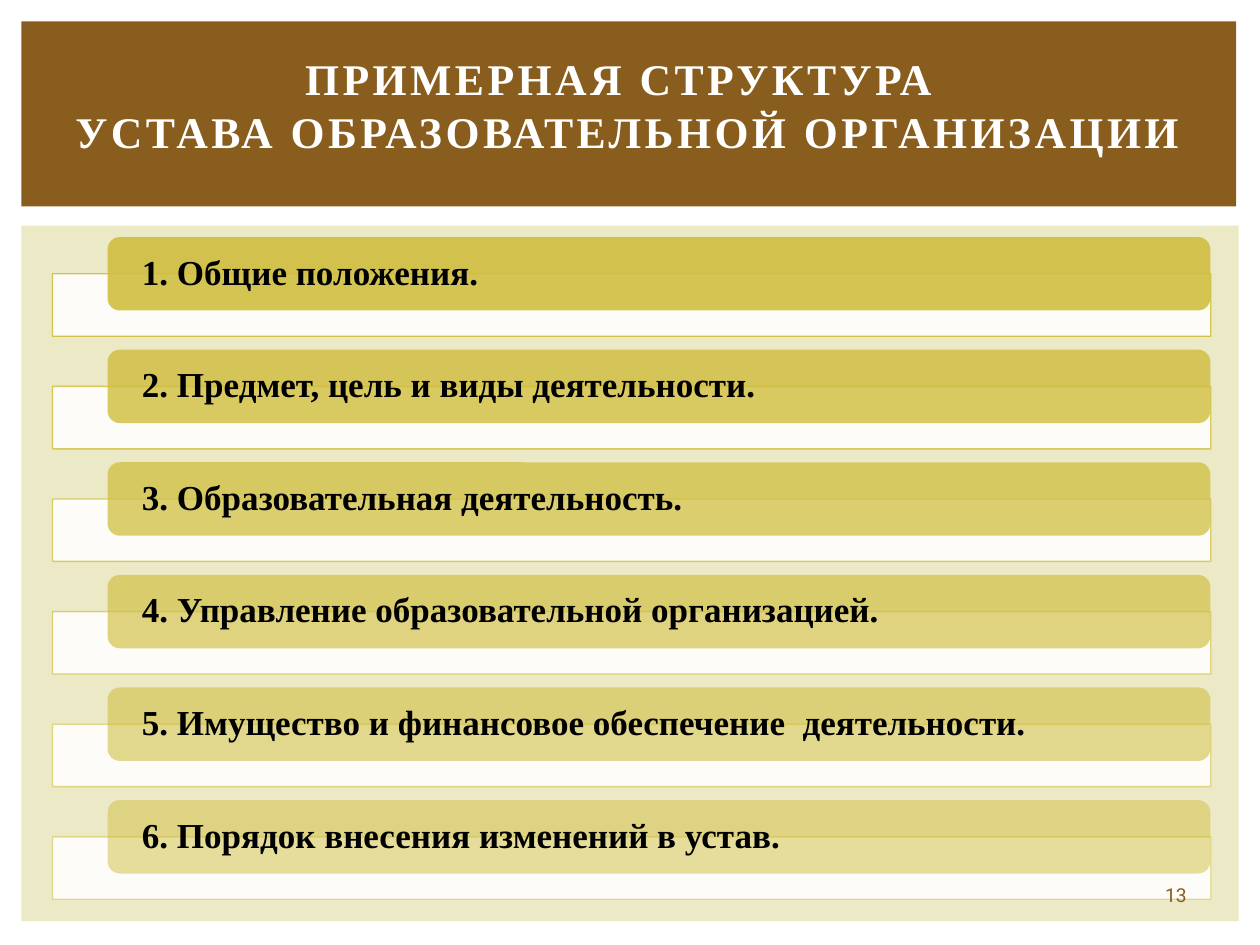
from dataclasses import dataclass

from lxml.etree import SubElement
from pptx import Presentation
from pptx.dml.color import RGBColor
from pptx.enum.shapes import MSO_SHAPE as Shape
from pptx.enum.text import MSO_ANCHOR as Anchor, MSO_AUTO_SIZE as AutoSize, PP_ALIGN as Align
from pptx.oxml.ns import qn
from pptx.util import Cm, Pt


@dataclass(frozen=True)
class Theme:
    brown: str = "895D1D"
    sand: str = "ECE9C6"
    gold: str = "D0BE40"
    white: str = "FFFFFF"
    black: str = "000000"
    serif: str = "Times New Roman"
    sans: str = "Roboto"
    title_size: int = 25
    item_size: int = 20
    number_size: int = 11


theme = Theme()
ITEMS = [
    "1. Общие положения.",
    "2. Предмет, цель и виды деятельности.",
    "3. Образовательная деятельность.",
    "4. Управление образовательной организацией.",
    "5. Имущество и финансовое обеспечение  деятельности.",
    "6. Порядок внесения изменений в устав.",
]
ROW_PITCH = 2.27

deck = Presentation()
deck.slide_width, deck.slide_height = Cm(25.4), Cm(19.05)
page = deck.slides.add_slide(deck.slide_layouts[5])


def add_block(kind, left, top, width, height, fill, opacity=100, line_opacity=None):
    """Add a filled shape; opacities are percentages, no line_opacity means no line."""
    block = page.shapes.add_shape(kind, Cm(left), Cm(top), Cm(width), Cm(height))
    block.shadow.inherit = False
    paints = [(block.fill, fill, opacity)]
    if line_opacity is None:
        block.line.fill.background()
    else:
        block.line.width = Pt(0.79)
        paints.append((block.line.fill, theme.gold, line_opacity))
    for paint, color, percent in paints:
        paint.solid()
        paint.fore_color.rgb = RGBColor.from_string(color)
    for color, (_, _, percent) in zip(block._element.spPr.iter(qn("a:srgbClr")), paints):
        if percent < 100:
            SubElement(color, qn("a:alpha"), val=str(percent * 1000))
    return block


def write(box, text, font_name, size, color, align, bold=False):
    frame = box.text_frame
    frame.text = text
    frame.word_wrap = True
    frame.auto_size = AutoSize.NONE
    frame.vertical_anchor = Anchor.MIDDLE
    para = frame.paragraphs[0]
    para.alignment = align
    para.font.name, para.font.size, para.font.bold = font_name, Pt(size), bold
    para.font.color.rgb = RGBColor.from_string(color)
    return para


# Background panel and title band
add_block(Shape.RECTANGLE, 0.43, 4.55, 24.54, 14.02, theme.sand)
add_block(Shape.RECTANGLE, 0.43, 0.43, 24.49, 3.73, theme.brown)

# Sections of the charter, fading from top to bottom
for index, item in enumerate(ITEMS):
    offset = index * ROW_PITCH
    fade = 90 - 8 * index
    add_block(Shape.RECTANGLE, 1.06, 5.52 + offset, 23.35, 1.26, theme.white, 90, fade)
    bar = add_block(Shape.ROUNDED_RECTANGLE, 2.17, 4.78 + offset, 22.23, 1.48, theme.gold, fade)
    para = write(bar, item, theme.serif, theme.item_size, theme.black, Align.JUSTIFY, True)
    para.line_spacing = 0.9
    frame = bar.text_frame
    frame.margin_left = frame.margin_right = Cm(0.62)
    frame.margin_top = frame.margin_bottom = 0

# Title, brought in front of its band
title = page.shapes.title
title.left, title.top, title.width, title.height = Cm(0.3), Cm(0.74), Cm(24.41), Cm(2.74)
para = write(title, "ПРИМЕРНАЯ СТРУКТУРА\v УСТАВА ОБРАЗОВАТЕЛЬНОЙ ОРГАНИЗАЦИИ",
             theme.serif, theme.title_size, theme.white, Align.CENTER, True)
for span in para.runs:
    span.font._element.set("spc", "200")
page.shapes._spTree.append(title._element)

# Page number
number = page.shapes.add_textbox(Cm(22.89), Cm(17.65), Cm(1.63), Cm(0.76))
write(number, "13", theme.sans, theme.number_size, theme.brown, Align.CENTER)

deck.save("out.pptx")
